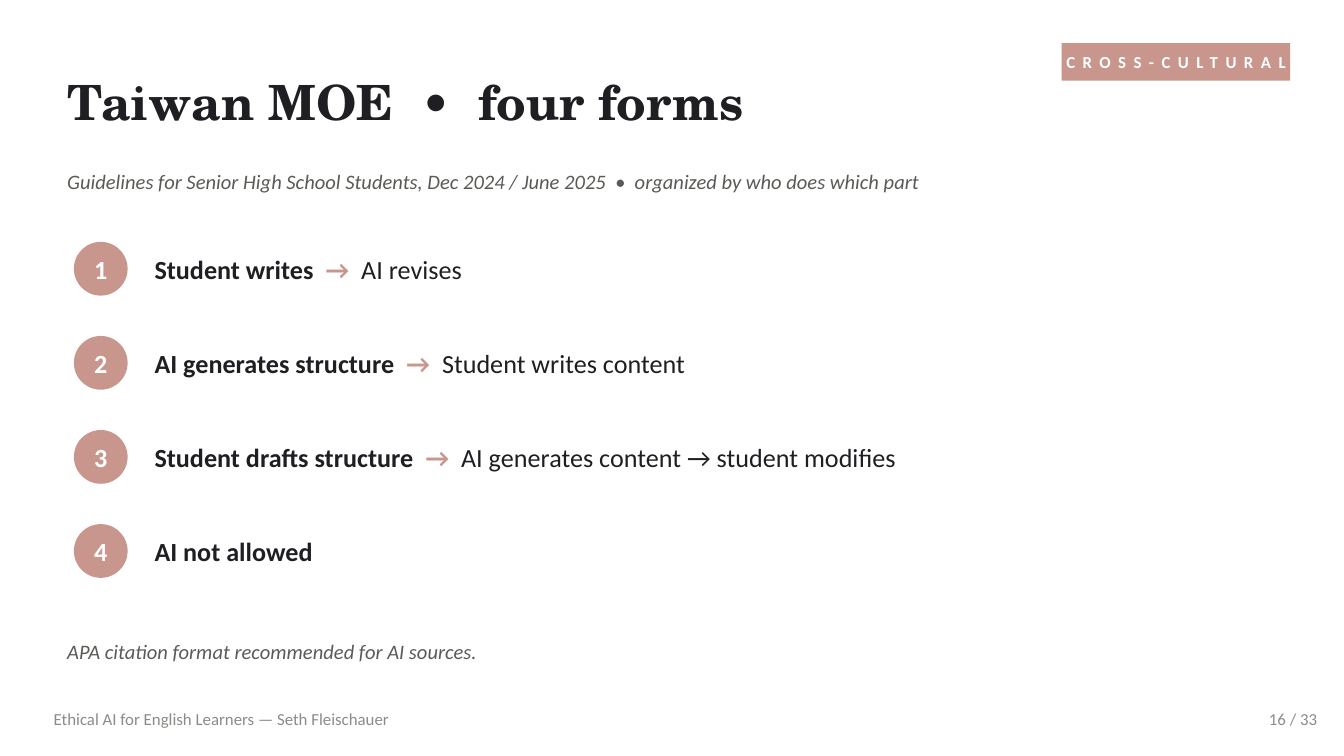
from pptx import Presentation
from pptx.dml.color import RGBColor
from pptx.enum.shapes import MSO_SHAPE as SHAPE
from pptx.enum.text import MSO_ANCHOR as ANCHOR, PP_ALIGN as ALIGN
from pptx.util import Pt

PX = 4572
COLORS = {"ink": "1F1F23", "rose": "C9968D", "white": "FFFFFF",
          "gray": "5C5A57", "light": "8E8B86"}
FORMATS = {
    "title": {"name": "TeX Gyre Schola", "size": Pt(26), "bold": True},
    "tag": {"name": "Calibri", "size": Pt(9), "bold": True},
    "note": {"name": "Calibri", "size": Pt(11), "italic": True},
    "strong": {"name": "Calibri", "size": Pt(14), "bold": True},
    "plain": {"name": "Calibri", "size": Pt(14), "bold": False},
    "footer": {"name": "Calibri", "size": Pt(9)},
}

prs = Presentation()
prs.slide_width, prs.slide_height = 2000 * PX, 1125 * PX
s = prs.slides.add_slide(prs.slide_layouts[6])


def add_text(box, runs, align=ALIGN.LEFT):
    tf = s.shapes.add_textbox(*[v * PX for v in box]).text_frame
    settings = {"word_wrap": True, "vertical_anchor": ANCHOR.MIDDLE,
                "margin_left": 0, "margin_top": 0, "margin_right": 0, "margin_bottom": 0}
    for key, value in settings.items():
        setattr(tf, key, value)
    p = tf.paragraphs[0]
    p.alignment = align
    for text, style, color in runs:
        r = p.add_run()
        r.text = text
        for key, value in FORMATS[style].items():
            setattr(r.font, key, value)
        r.font.color.rgb = RGBColor.from_string(COLORS[color])
    return p


def add_badge(kind, box, text, style):
    sp = s.shapes.add_shape(kind, *[v * PX for v in box])
    sp.shadow.inherit = False
    sp.fill.solid()
    sp.fill.fore_color.rgb = RGBColor.from_string(COLORS["rose"])
    sp.line.fill.background()
    return add_text(box, [(text, style, "white")], ALIGN.CENTER)


add_text((100, 80, 1340, 140), [("Taiwan MOE  •  four forms", "title", "ink")])
p = add_badge(SHAPE.RECTANGLE, (1580, 64, 340, 56), "CROSS-CULTURAL", "tag")
p.runs[0].font._element.set("spc", "400")
add_text((100, 230, 1800, 80), [(
    "Guidelines for Senior High School Students, Dec 2024 / June 2025  •  "
    "organized by who does which part", "note", "gray")])

forms = [
    ("Student writes", "AI revises"),
    ("AI generates structure", "Student writes content"),
    ("Student drafts structure", "AI generates content → student modifies"),
    ("AI not allowed", ""),
]
for i, (first, then) in enumerate(forms):
    y = 360 + 140 * i
    add_badge(SHAPE.OVAL, (110, y, 80, 80), str(i + 1), "strong")
    runs = [(first, "strong", "ink")]
    if then:
        runs += [("  →  ", "strong", "rose"), (then, "plain", "ink")]
    add_text((230, y - 10, 1660, 100), runs)

add_text((100, 940, 1800, 60),
         [("APA citation format recommended for AI sources.", "note", "gray")])
add_text((1800, 1040, 160, 60), [("16 / 33", "footer", "light")], ALIGN.RIGHT)
add_text((80, 1040, 1400, 60),
         [("Ethical AI for English Learners — Seth Fleischauer", "footer", "light")])

prs.save("out.pptx")
